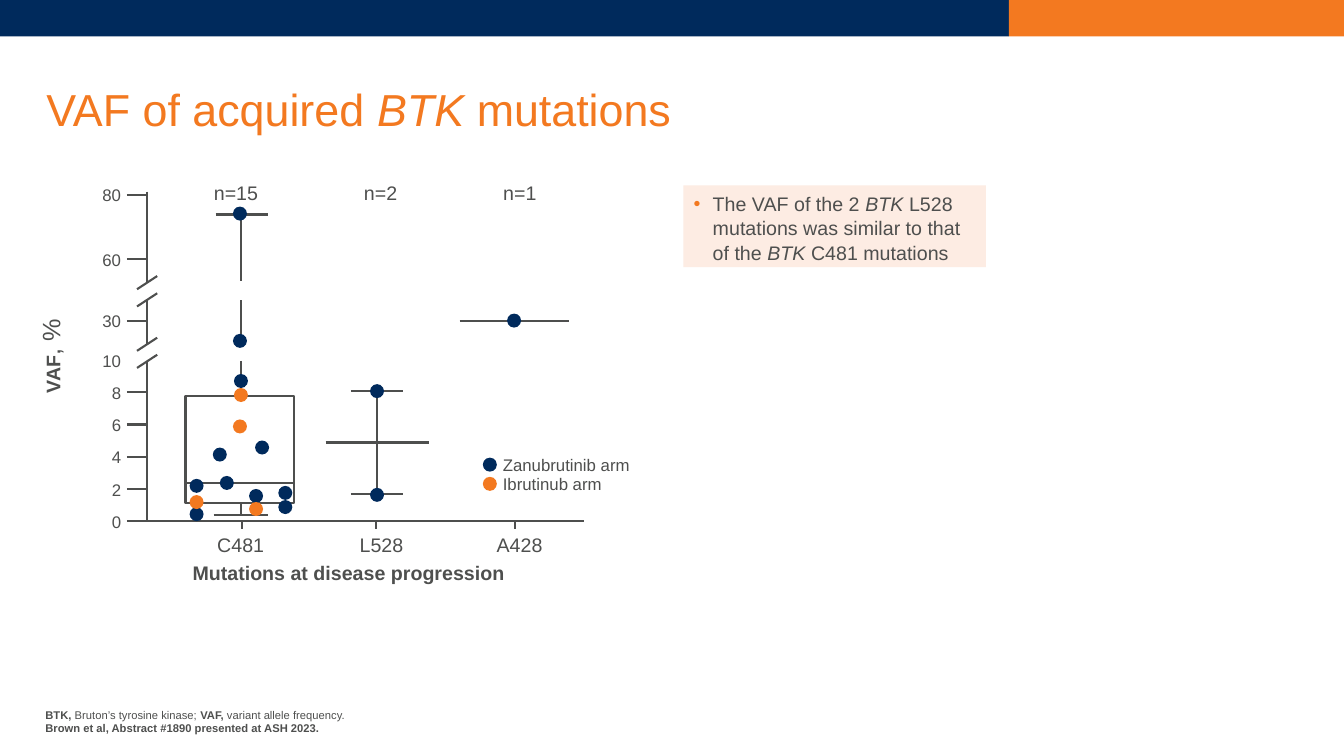
from lxml.etree import SubElement as SubEl
from pptx import Presentation
from pptx.dml.color import RGBColor
from pptx.enum.shapes import MSO_CONNECTOR as CON, MSO_SHAPE as SHAPE
from pptx.enum.text import MSO_ANCHOR as ANC, MSO_AUTO_SIZE as AUTO, PP_ALIGN as AL
from pptx.oxml.ns import qn
from pptx.util import Pt

NAVY = RGBColor(0x00, 0x2A, 0x5C)
ORANGE = RGBColor(0xF3, 0x79, 0x20)
PEACH = RGBColor(0xFD, 0xEC, 0xE3)
GREY = RGBColor(0x4E, 0x4F, 0x4E)

AXIS, BASE, STEP = 105.1, 372.2, 99.4
MID = 172.1
TICKS = (80, 60, 30, 10, 8, 6, 4, 2, 0)
GROUPS = (("C481", "n=15", 172.8), ("L528", "n=2", 268.6), ("A428", "n=1", 367.9))
DOTS = {
    NAVY: ((367.2, 30), (269.3, 8.07), (269.3, 1.63), (171.4, 74.1), (171.4, 23.7),
           (172.1, 8.7), (187.2, 4.57), (157, 4.13), (140.4, 2.19), (162, 2.37),
           (182.9, 1.56), (203.8, 1.75), (203.8, 0.87), (140.4, 0.43)),
    ORANGE: ((140.4, 1.18), (182.9, 0.75), (172.1, 7.83), (171.4, 5.88)),
}


def level(vaf):
    """Return the height on the broken axis for a VAF value."""
    if vaf <= 10:
        return BASE - 11.5 * vaf
    return (229 + 2.3 * (30 - vaf)) if vaf <= 30 else (139 + 2.3 * (80 - vaf))


def place(item, left, top, wide, high):
    """Set the place and size of an item in points."""
    item.left, item.top = Pt(left), Pt(top)
    item.width, item.height = Pt(wide), Pt(high)


def write(para, text, size, color=GREY, mark="bold", align=AL.LEFT):
    """Write text in runs, with the parts between stars marked."""
    para.alignment = align
    for spot, part in enumerate(text.split("*")):
        if part:
            run = para.add_run()
            run.text = part
            font = run.font
            font.name, font.size = "Arial", Pt(size)
            font.color.rgb = color
            setattr(font, mark, spot % 2 == 1)


def setup(frame, anchor, inset=True):
    """Set wrapping, anchor and insets of a text frame."""
    frame.word_wrap, frame.auto_size = True, AUTO.NONE
    frame.vertical_anchor = anchor
    side, edge = (7.2, 3.6) if inset else (0, 0)
    frame.margin_left = frame.margin_right = Pt(side)
    frame.margin_top = frame.margin_bottom = Pt(edge)


def label(slide, text, spot, size, align=AL.LEFT, anchor=ANC.MIDDLE, inset=True):
    """Add a text box with one paragraph per line of text."""
    frame = slide.shapes.add_textbox(*map(Pt, spot)).text_frame
    setup(frame, anchor, inset)
    for count, line in enumerate(text.split("\n")):
        para = frame.add_paragraph() if count else frame.paragraphs[0]
        write(para, line, size, align=align)
    return frame


def line(slide, x1, y1, x2, y2):
    """Add a grey line."""
    rule = slide.shapes.add_connector(CON.STRAIGHT, Pt(x1), Pt(y1), Pt(x2), Pt(y2))
    rule.line.color.rgb, rule.line.width = GREY, Pt(1.5)
    SubEl(rule._element.spPr, qn("a:effectLst"))


def shape(slide, kind, spot, color=None):
    """Add a filled shape, or a grey outline if it has no colour."""
    item = slide.shapes.add_shape(kind, *map(Pt, spot))
    item.shadow.inherit = False
    if color is None:
        item.fill.background()
        item.line.color.rgb, item.line.width = GREY, Pt(1.5)
    else:
        item.fill.solid()
        item.fill.fore_color.rgb = color
        item.line.fill.background()


def dot(slide, x, y, color):
    """Add a round marker centred on a point."""
    shape(slide, SHAPE.OVAL, (x - 5, y - 5, 10, 10), color)


def bullet(para, color):
    """Give a paragraph a coloured bullet and a hanging indent."""
    props = para._p.get_or_add_pPr()
    props.set("marL", str(Pt(13.7)))
    props.set("indent", str(-Pt(13.7)))
    SubEl(SubEl(props, qn("a:buClr")), qn("a:srgbClr")).set("val", str(color))
    SubEl(props, qn("a:buChar")).set("char", "•")


def heads(slide):
    """Fill the title and the list."""
    title, body = slide.placeholders[0], slide.placeholders[1]
    place(title, 33.1, 45.4, 895, 69.8)
    setup(title.text_frame, ANC.MIDDLE, False)
    para = title.text_frame.paragraphs[0]
    para.line_spacing = 0.9
    write(para, "VAF of acquired *BTK* mutations", 32, ORANGE, "italic")

    place(body, 488.2, 132.5, 216, 58.3)
    body.fill.solid()
    body.fill.fore_color.rgb = PEACH
    setup(body.text_frame, ANC.TOP)
    para = body.text_frame.paragraphs[0]
    bullet(para, ORANGE)
    para.space_before, para.line_spacing = Pt(0), 1.05
    write(para, "The VAF of the 2 *BTK *L528 mutations was similar to that "
          "of the *BTK* C481 mutations", 14, mark="italic")


def axes(slide):
    """Draw the broken axis, the ticks and their labels."""
    line(slide, 90.7, BASE, 416.9, BASE)
    for top, end in ((136.8, 202.3), (214.6, 245.5), (257.8, BASE)):
        line(slide, AXIS, top, AXIS, end)
    for y in (206.6, 218.9, 250.6, 262.8):
        line(slide, AXIS - 7.2, y, AXIS + 7.2, y - 9.4)
    for tick in TICKS:
        y = level(tick)
        if tick not in (0, 10):
            line(slide, 90.7, y, AXIS, y)
        label(slide, str(tick), (56.9, y - 10.4, 36.7, 21.6), 12, AL.RIGHT)
    for count, (name, size, x) in enumerate(GROUPS):
        line(slide, x, BASE, x, BASE + 5.8)
        label(slide, name, (141.8 + count * STEP, 376.6, 54, 24.5), 14, AL.RIGHT)
        label(slide, size, (144.7 + count * STEP, 125.3, 46.8, 24.5), 14, AL.RIGHT)
    label(slide, "*Mutations at disease progression*", (113, 397.4, 272.2, 31.7),
          14, AL.CENTER, ANC.TOP)
    frame = label(slide, "*VAF*, %", (21.6, 218.9, 36, 71.3), 14, AL.CENTER, ANC.TOP)
    frame._txBody.bodyPr.set("vert", "vert270")
    frame.paragraphs[0].runs[1].font.size = Pt(18)


def plot(slide):
    """Draw the boxes, whiskers, markers and legend."""
    high, low = level(7.76), level(1.12)
    shape(slide, SHAPE.RECTANGLE, (132.5, high, 77.8, low - high))
    for x1, x2, vaf in ((152.6, 191.5, 0.37), (154.1, 191.5, 73.8), (132.5, 210.3, 2.37),
                        (250.6, 288, 8.07), (232.6, 306.7, 4.88), (250.6, 288, 1.69),
                        (328.3, 406.1, 30)):
        line(slide, x1, level(vaf), x2, level(vaf))
    for x, top, end in ((MID, level(73.8), 200.9), (MID, 214.6, 241.2),
                        (MID, 257.8, high), (MID, low, level(0.37)),
                        (269.3, level(8.07), level(1.69))):
        line(slide, x, top, x, end)
    for color, spots in DOTS.items():
        for x, vaf in spots:
            dot(slide, x, level(vaf), color)
    for name, y, color in (("Zanubrutinib arm", 331.9, NAVY), ("Ibrutinub arm", 345.6, ORANGE)):
        dot(slide, 349.9, y, color)
        label(slide, name, (352.1, y - 10.8, 166.3, 21.6), 12)


def main():
    """Build and save the slide."""
    deck = Presentation()
    deck.slide_width, deck.slide_height = Pt(960), Pt(540)
    slide = deck.slides.add_slide(deck.slide_layouts[1])
    shape(slide, SHAPE.RECTANGLE, (0, 0, 720.7, 26), NAVY)
    shape(slide, SHAPE.RECTANGLE, (720.7, 0, 239.3, 26), ORANGE)
    heads(slide)
    axes(slide)
    plot(slide)
    label(slide, "*BTK, *Bruton’s tyrosine kinase; *VAF, *variant allele frequency.\n"
          "*Brown et al, Abstract #1890 presented at ASH 2023.*",
          (32.4, 494.6, 671.8, 30.2), 8, anchor=ANC.BOTTOM, inset=False)
    deck.save("out.pptx")


if __name__ == "__main__":
    main()
